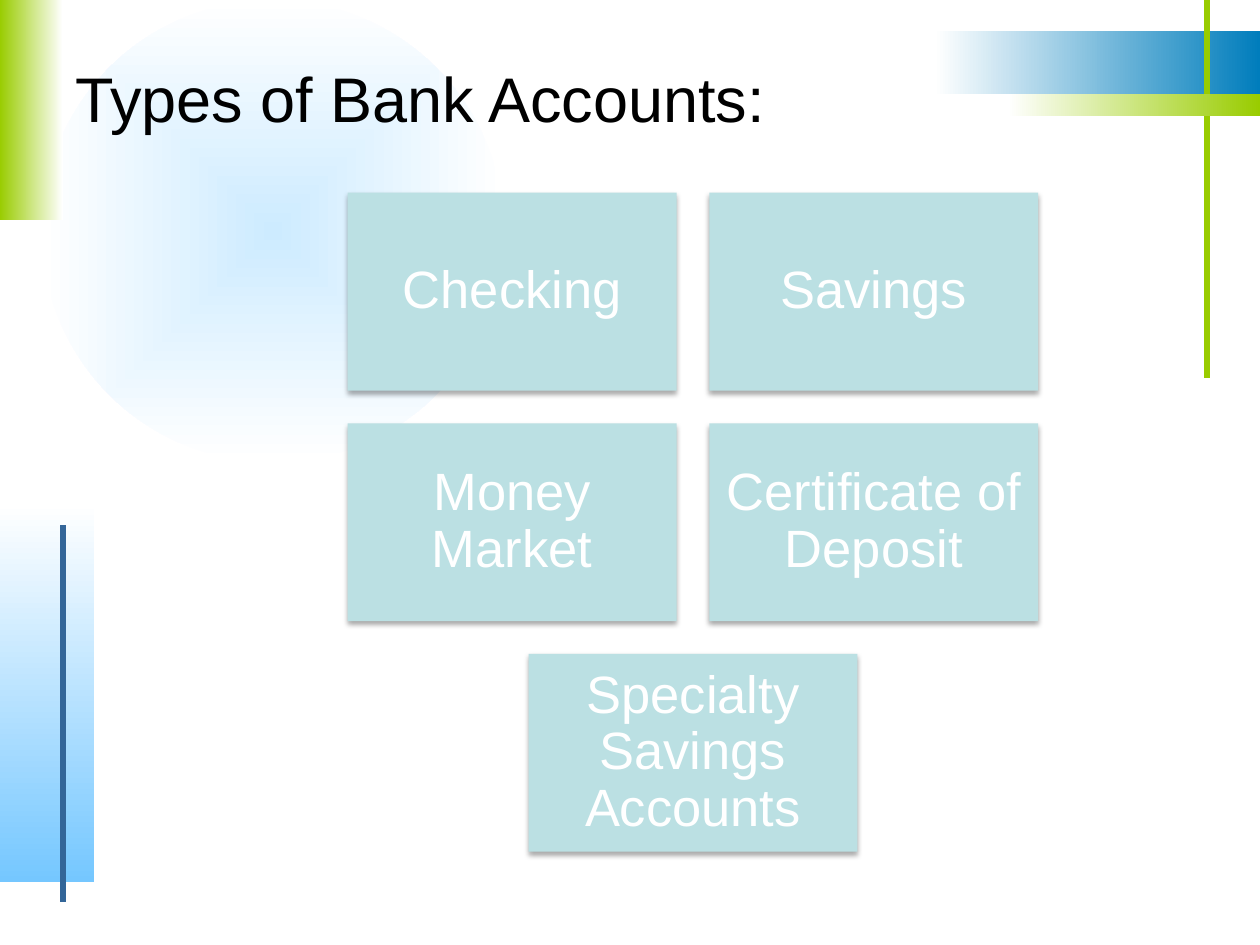
import pptx
import pptx.util
import pptx.dml.color
import pptx.enum.shapes
import pptx.enum.text
import pptx.oxml
import pptx.oxml.ns

Inches = pptx.util.Inches
Pt = pptx.util.Pt
Shape = pptx.enum.shapes.MSO_SHAPE

COLORS = {
    "white": "FFFFFF",
    "black": "000000",
    "pale": "CDEBFF",
    "ocean": "007DBC",
    "sky": "75C7FF",
    "lime": "99CC00",
    "navy": "336699",
    "card": "BBE0E3",
}
NAMESPACE = pptx.oxml.ns.nsdecls("a")
RADIAL = (f'<a:path {NAMESPACE} path="shape"><a:fillToRect l="50000" t="50000" '
          'r="50000" b="50000"/></a:path>')
NO_EFFECT = f"<a:effectLst {NAMESPACE}/>"
CARD_SHADOW = (f'<a:effectLst {NAMESPACE}><a:outerShdw blurRad="{Pt(3.1)}" dist="{Pt(1.8)}" '
               'dir="5400000" rotWithShape="0"><a:srgbClr val="000000">'
               '<a:alpha val="35000"/></a:srgbClr></a:outerShdw></a:effectLst>')


class SlideBuilder:
    """Hold the style and the current page, and add each kind of element."""

    def __init__(self, page, font="Arial"):
        self.page = page
        self.font = font

    def color(self, name):
        return pptx.dml.color.RGBColor.from_string(COLORS[name])

    def shape(self, kind, place):
        shape = self.page.shapes.add_shape(kind, *map(Inches, place))
        shape.line.fill.background()
        shape.shadow.inherit = False
        return shape

    def gradient(self, kind, place, start, end, angle=0):
        shape = self.shape(kind, place)
        shape.fill.gradient()
        for stop, position, name in zip(shape.fill.gradient_stops, (0, 1), (start, end)):
            stop.position = position
            stop.color.rgb = self.color(name)
        shape.fill.gradient_angle = angle
        return shape

    def glow(self, place, center, edge):
        properties = self.gradient(Shape.OVAL, place, center, edge).element.spPr
        linear = properties.find(".//" + pptx.oxml.ns.qn("a:lin"))
        linear.getparent().replace(linear, pptx.oxml.parse_xml(RADIAL))

    def line(self, x, top, bottom, name):
        line = self.page.shapes.add_connector(
            pptx.enum.shapes.MSO_CONNECTOR.STRAIGHT,
            Inches(x), Inches(top), Inches(x), Inches(bottom))
        line.line.color.rgb = self.color(name)
        line.line.width = Pt(3)
        line.element.spPr.append(pptx.oxml.parse_xml(NO_EFFECT))

    def label(self, box, text, size, name):
        frame = box.text_frame
        frame.word_wrap = True
        frame.vertical_anchor = pptx.enum.text.MSO_ANCHOR.MIDDLE
        para = frame.paragraphs[0]
        para.text = text
        para.font.name = self.font
        para.font.size = Pt(size)
        para.font.color.rgb = self.color(name)
        return para

    def title(self, place, text):
        box = self.page.shapes.add_textbox(*map(Inches, place))
        self.label(box, text, 36, "black")

    def card(self, place, text):
        box = self.shape(Shape.RECTANGLE, place)
        box.fill.solid()
        box.fill.fore_color.rgb = self.color("card")
        properties = box.element.spPr
        properties.replace(properties.find(pptx.oxml.ns.qn("a:effectLst")),
                           pptx.oxml.parse_xml(CARD_SHADOW))
        para = self.label(box, text, 30, "white")
        para.alignment = pptx.enum.text.PP_ALIGN.CENTER
        para.line_spacing = 0.9
        frame = box.text_frame
        frame.margin_left = frame.margin_right = Inches(0.12)
        frame.margin_top = frame.margin_bottom = Inches(0.12)


def main():
    deck = pptx.Presentation()
    deck.slide_width, deck.slide_height = Inches(10), Inches(7.5)
    builder = SlideBuilder(deck.slides.add_slide(deck.slide_layouts[6]))

    builder.glow((0.33, 0, 3.67, 3.67), "pale", "white")
    builder.gradient(Shape.RECTANGLE, (7.42, 0.25, 2.58, 0.5), "white", "ocean")
    builder.gradient(Shape.RECTANGLE, (0, 4, 0.75, 3), "white", "sky", angle=270)
    builder.line(9.58, 0, 3, "lime")
    builder.gradient(Shape.RECTANGLE, (0, 0, 0.5, 1.75), "lime", "white")
    builder.gradient(Shape.RECTANGLE, (8, 0.75, 2, 0.17), "white", "lime")
    builder.line(0.5, 4.17, 7.16, "navy")
    builder.title((0.5, 0.17, 9, 1.2), "Types of Bank Accounts:")

    rows = [
        ["Checking", "Savings"],
        ["Money Market", "Certificate of Deposit"],
        ["Specialty Savings Accounts"],
    ]
    width, height, gap = 2.61, 1.57, 0.26
    center, top = 5.5, 1.53
    for row, names in enumerate(rows):
        left = center - (len(names) * (width + gap) - gap) / 2
        for column, name in enumerate(names):
            builder.card((left + column * (width + gap), top + row * (height + gap),
                          width, height), name)

    deck.save("out.pptx")


if __name__ == "__main__":
    main()
